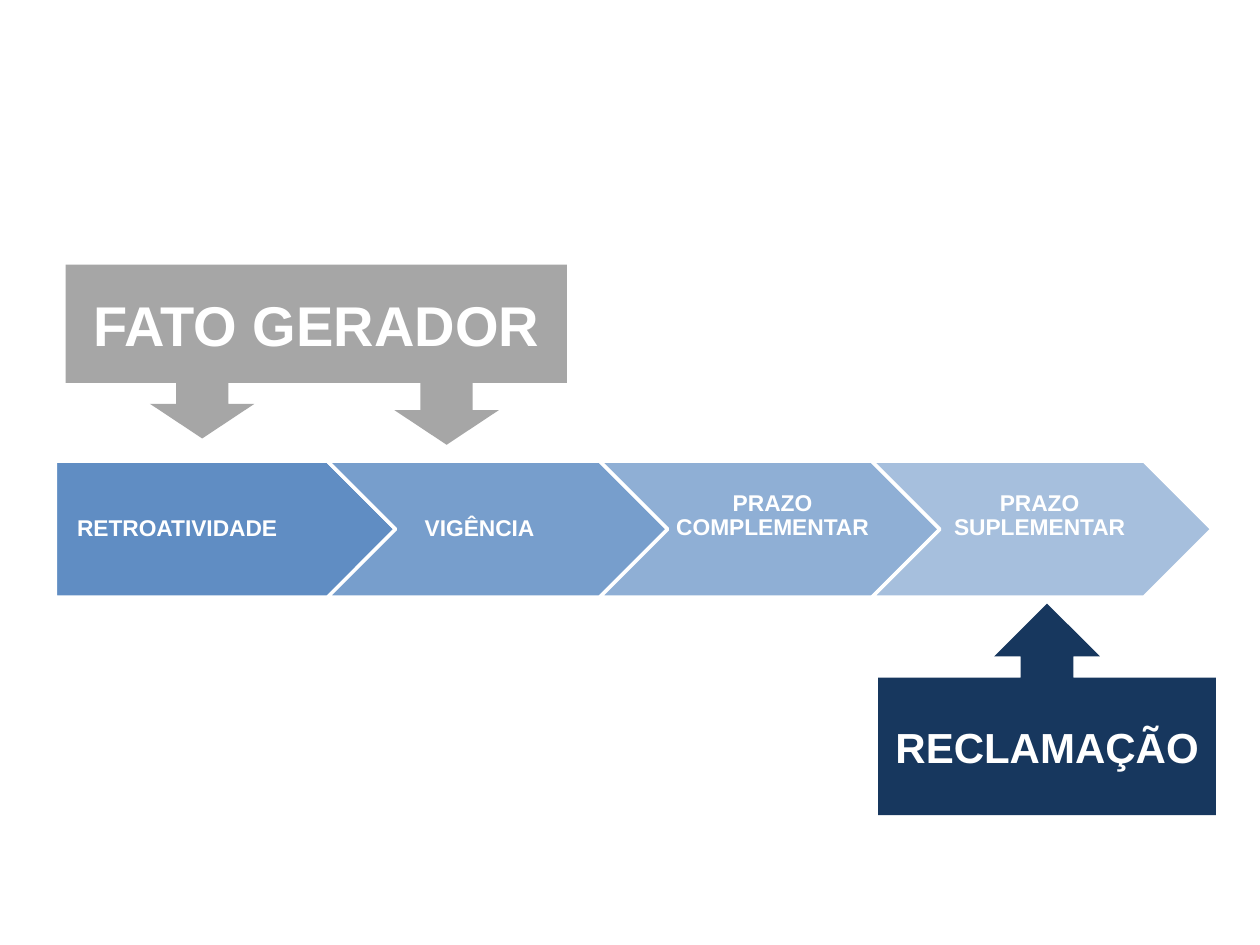
from lxml.etree import SubElement
from pptx import Presentation
from pptx.dml.color import RGBColor
from pptx.enum.shapes import MSO_SHAPE
from pptx.enum.text import MSO_ANCHOR, PP_ALIGN
from pptx.oxml.ns import qn
from pptx.util import Inches, Pt

WHITE, BLUE, NAVY, GREY = "FFFFFF", "4F81BD", "17375E", "A6A6A6"


def color(code):
    return RGBColor.from_string(code)


def write(shape, text, size, inset=(0.1, 0.05, 0.1, 0.05), space=1.0):
    frame = shape.text_frame
    frame.word_wrap = True
    frame.vertical_anchor = MSO_ANCHOR.MIDDLE
    (frame.margin_left, frame.margin_top,
     frame.margin_right, frame.margin_bottom) = map(Inches, inset)
    line = frame.paragraphs[0]
    line.alignment = PP_ALIGN.CENTER
    line.line_spacing = space
    run = line.add_run()
    run.text = text
    run.font.name = "Arial"
    run.font.size = Pt(size)
    run.font.bold = True
    run.font.color.rgb = color(WHITE)


def draw(slide, kind, box, fill, alpha=100, edge=None):
    shape = slide.shapes.add_shape(kind, *map(Inches, box))
    shape.shadow.inherit = False
    shape.fill.solid()
    shape.fill.fore_color.rgb = color(fill)
    if alpha < 100:
        tint = shape.fill._xPr.find(".//" + qn("a:srgbClr"))
        SubElement(tint, qn("a:alpha"), val=str(alpha * 1000))
    if edge:
        shape.line.color.rgb = color(edge)
        shape.line.width = Pt(2)
    else:
        shape.line.fill.background()
    return shape


def phases(slide, left, top, width, height):
    steps = [
        ("RETROATIVIDADE", 90, 0.54, 0.04),
        ("VIGÊNCIA", 77, 0.33, 0.04),
        ("PRAZO COMPLEMENTAR", 63, 0, 0.25),
        ("PRAZO SUPLEMENTAR", 50, 0.08, 0.25),
    ]
    tip = height / 2
    wide = (width + (len(steps) - 1) * tip) / len(steps)
    for i, (text, alpha, right, low) in enumerate(steps):
        x = left + i * (wide - tip)
        kind = MSO_SHAPE.CHEVRON if i else MSO_SHAPE.PENTAGON
        draw(slide, kind, (x, top, wide, height), BLUE, alpha, WHITE)
        start = tip if i else 0
        span = wide - 2 * tip if i else wide - tip / 2
        label = slide.shapes.add_textbox(
            *map(Inches, (x + start, top, span, height)))
        write(label, text, 13, (0.04, 0.04, right, low), 0.9)


def claim(slide, *box):
    write(draw(slide, MSO_SHAPE.UP_ARROW_CALLOUT, box, NAVY), "RECLAMAÇÃO", 24)


def event(slide, left, top, width, height):
    box = (left, top, width, height)
    write(draw(slide, MSO_SHAPE.RECTANGLE, box, GREY), "FATO GERADOR", 32)
    for x, y in ((0.67, 0.83), (2.61, 0.88)):
        draw(slide, MSO_SHAPE.DOWN_ARROW, (left + x, top + y, 0.83, 0.55), GREY)


def main():
    deck = Presentation()
    deck.slide_width, deck.slide_height = Inches(10), Inches(7.5)
    slide = deck.slides.add_slide(deck.slide_layouts[6])
    phases(slide, 0.44, 3.66, 9.18, 1.08)
    claim(slide, 6.97, 4.79, 2.68, 1.68)
    event(slide, 0.52, 2.1, 3.98, 0.94)
    deck.save("out.pptx")


if __name__ == "__main__":
    main()
